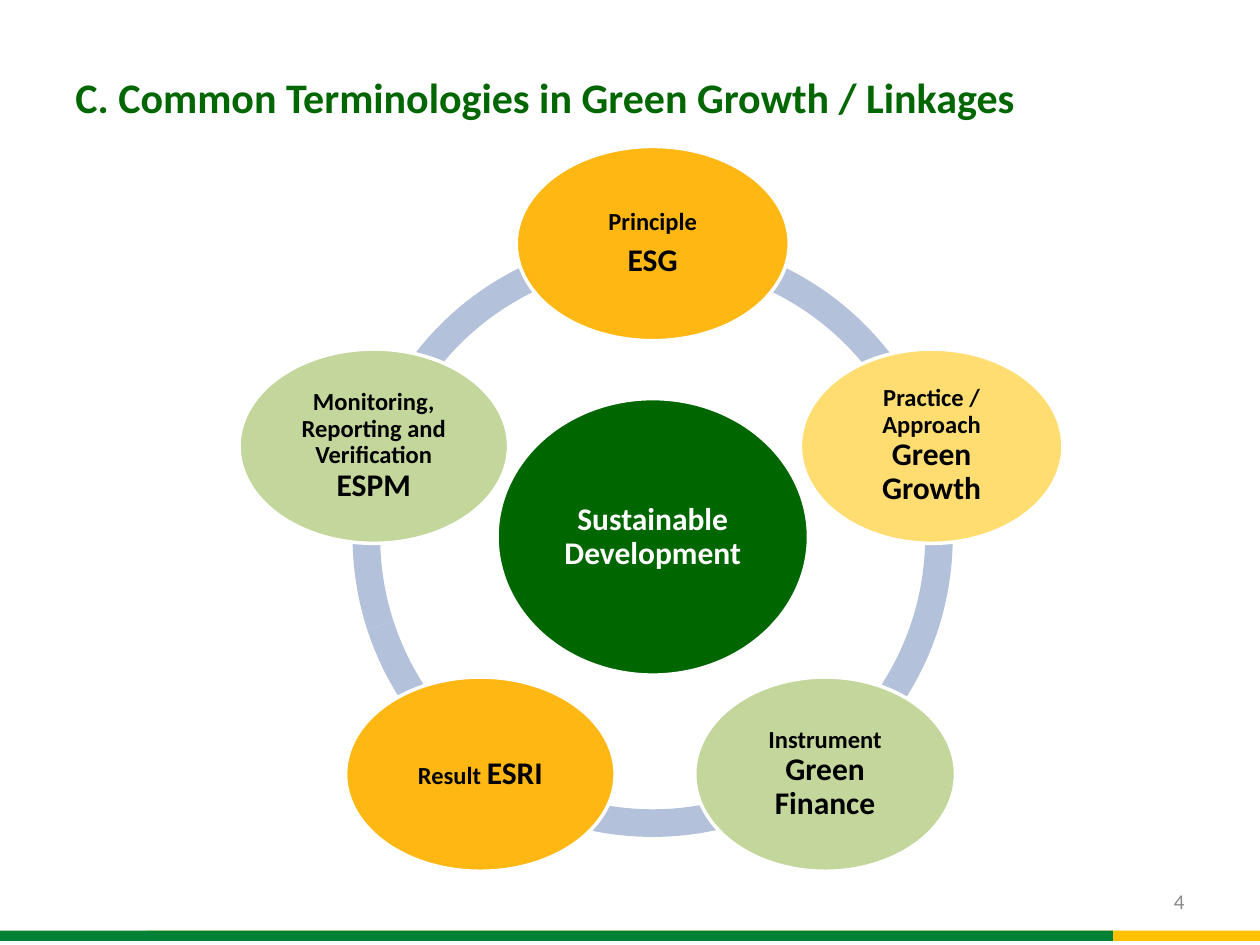
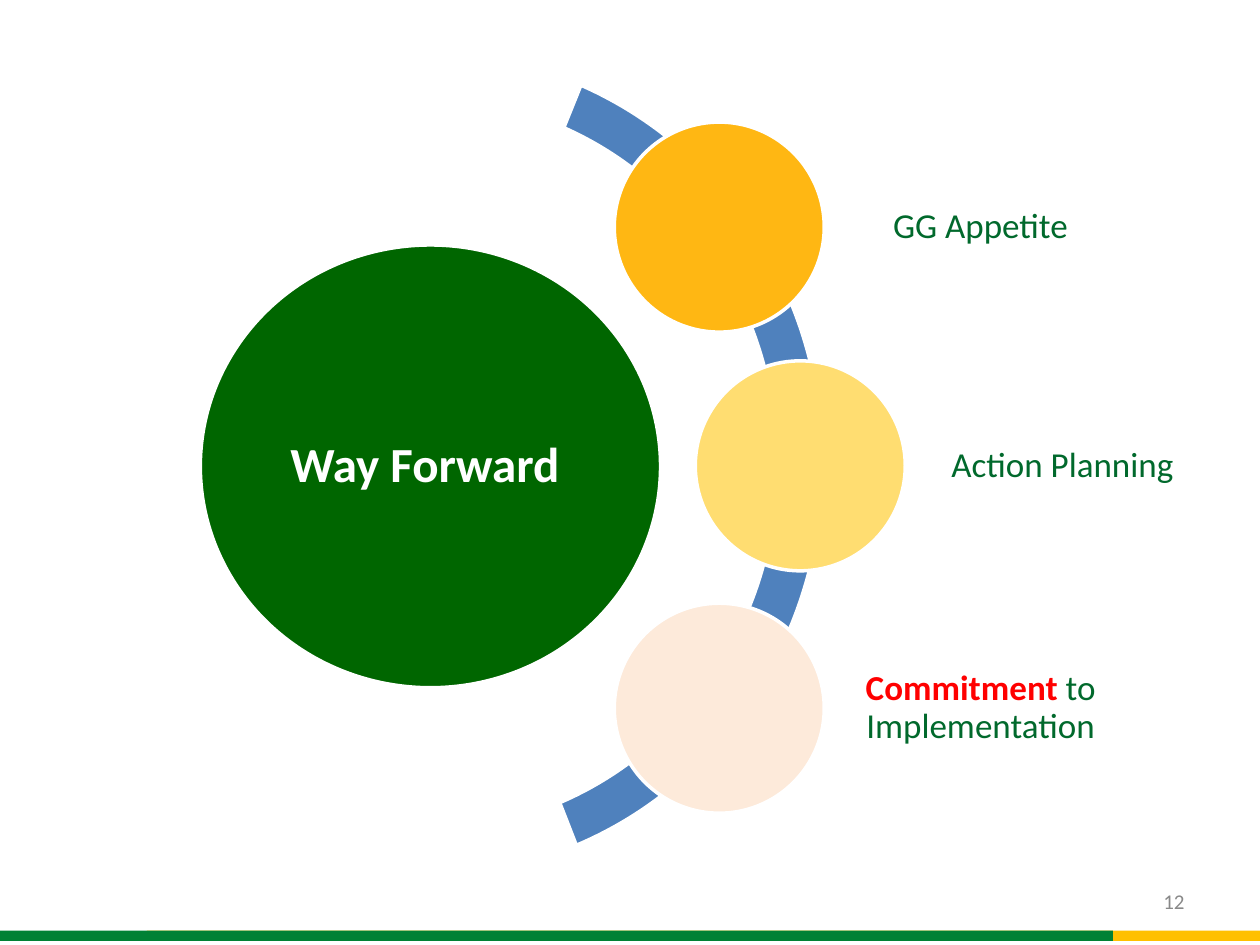
from dataclasses import dataclass
from itertools import pairwise
from math import cos, radians, sin

from pptx import Presentation
from pptx.dml import color
from pptx.enum import shapes, text
from pptx.util import Pt


@dataclass(frozen=True)
class Theme:
    font: str = "Calibri"
    white: str = "FFFFFF"
    black: str = "000000"
    dark_green: str = "006600"
    band_green: str = "018135"
    band_gold: str = "FFC000"
    label_green: str = "01692C"
    red: str = "FF0000"
    grey: str = "898989"
    orange: str = "FFB713"
    yellow: str = "FFDD71"
    light_green: str = "C3D69B"
    peach: str = "FDEADA"
    ring_blue: str = "B3C1DB"
    arc_blue: str = "4F81BD"
    hero_size: int = 28
    title_size: int = 24
    label_size: int = 20
    term_size: int = 18
    caption_size: int = 14
    number_size: int = 12
    outline: float = 2


THEME = Theme()
ALIGN = text.PP_ALIGN
ANCHOR = text.MSO_ANCHOR


def rgb(value):
    return color.RGBColor.from_string(value)


def style_font(font, size, ink, bold=False):
    font.name = THEME.font
    font.size = Pt(size)
    font.color.rgb = rgb(ink)
    font.bold = bold


def add_filled(slide, kind, left, top, width, height, fill, outlined=False):
    shape = slide.shapes.add_shape(kind, Pt(left), Pt(top), Pt(width), Pt(height))
    shape.shadow.inherit = False
    shape.fill.solid()
    shape.fill.fore_color.rgb = rgb(fill)
    if outlined:
        shape.line.color.rgb = rgb(THEME.white)
        shape.line.width = Pt(THEME.outline)
    else:
        shape.line.fill.background()
    return shape


def add_ellipse(slide, center_x, center_y, width, height, fill):
    return add_filled(slide, shapes.MSO_SHAPE.OVAL, center_x - width / 2,
                      center_y - height / 2, width, height, fill, outlined=True)


def add_arc(slide, center_x, center_y, width, height, start, end, thickness, fill, outlined=False):
    arc = add_filled(slide, shapes.MSO_SHAPE.BLOCK_ARC, center_x - width / 2,
                     center_y - height / 2, width, height, fill, outlined)
    arc.adjustments[0] = start * 0.6
    arc.adjustments[1] = end * 0.6
    arc.adjustments[2] = thickness


def write_centered(shape, paragraphs, inset, space_after):
    frame = shape.text_frame
    frame.word_wrap = True
    frame.vertical_anchor = ANCHOR.MIDDLE
    frame.margin_left = frame.margin_right = Pt(inset)
    frame.margin_top = frame.margin_bottom = Pt(inset)
    for index, runs in enumerate(paragraphs):
        paragraph = frame.add_paragraph() if index else frame.paragraphs[0]
        paragraph.alignment = ALIGN.CENTER
        paragraph.line_spacing = 0.9
        paragraph.space_after = Pt(space_after)
        for words, *style in runs:
            run = paragraph.add_run()
            run.text = words
            if len(runs) > 1:
                style_font(run.font, *style)
            else:
                style_font(paragraph.font, *style)


def add_line_of_text(slide, box, words, size, ink, alignment, anchor, bold=False):
    text_box = slide.shapes.add_textbox(*map(Pt, box))
    frame = text_box.text_frame
    frame.word_wrap = True
    frame.vertical_anchor = anchor
    paragraph = frame.paragraphs[0]
    paragraph.text = words
    paragraph.alignment = alignment
    style_font(paragraph.font, size, ink, bold)


def add_base_slide(presentation, number):
    slide = presentation.slides.add_slide(presentation.slide_layouts[6])
    for left, fill in ((84, THEME.band_gold), (0, THEME.band_green)):
        add_filled(slide, shapes.MSO_SHAPE.RECTANGLE, left, 531.8, 636, 5.8, fill)
    add_line_of_text(slide, (516, 500.5, 168, 28.8), str(number), THEME.number_size,
                     THEME.grey, ALIGN.RIGHT, ANCHOR.MIDDLE)
    return slide


def build_linkages(presentation):
    slide = add_base_slide(presentation, 4)
    add_line_of_text(slide, (36, 37.5, 666, 36), "C. Common Terminologies in Green Growth / Linkages",
                     THEME.title_size, THEME.dark_green, ALIGN.LEFT, ANCHOR.TOP, bold=True)

    center_x, center_y, radius, ring = 373, 306.8, 167.6, 343
    boundaries = [32.4 + 43.2 * step for step in range(5)]
    for start, end in pairwise(boundaries + boundaries[:1]):
        add_arc(slide, center_x, center_y, ring, ring, start, end, 0.046, THEME.ring_blue)

    core = add_ellipse(slide, center_x, center_y, 178, 158, THEME.dark_green)
    write_centered(core, [[("Sustainable Development", THEME.term_size, THEME.white, True)]], 2, 6)

    def caption(words):
        return words, THEME.caption_size, THEME.black, True

    def term(words):
        return words, THEME.term_size, THEME.black, True

    nodes = (
        (156, THEME.orange, [[caption("Principle")], [term("ESG")]]),
        (150, THEME.yellow, [[caption("Practice / Approach "), term("Green Growth")]]),
        (149, THEME.light_green, [[caption("Instrument "), term("Green Finance")]]),
        (154, THEME.orange, [[caption("Result "), term("ESRI")]]),
        (154, THEME.light_green,
         [[caption("Monitoring, Reporting and Verification "), term("ESPM")]]),
    )
    for index, (width, fill, paragraphs) in enumerate(nodes):
        angle = radians(360 / len(nodes) * index - 90)
        node = add_ellipse(slide, center_x + radius * cos(angle), center_y + radius * sin(angle),
                           width, 111, fill)
        write_centered(node, paragraphs, 1.5, 5)


def build_way_forward(presentation):
    slide = add_base_slide(presentation, 12)
    hub = add_ellipse(slide, 246, 266.5, 263, 253, THEME.dark_green)
    write_centered(hub, [[("Way Forward ", THEME.hero_size, THEME.white, True)]], 3, 10)
    add_arc(slide, 244.5, 265.3, 451.4, 470, 292, 68.7, 0.058, THEME.arc_blue, outlined=True)

    def label(words):
        return words, THEME.label_size, THEME.label_green

    commitment = ("Commitment", THEME.label_size, THEME.red, True)
    steps = (
        (411, 129.8, THEME.orange, (467.3, 186), [label("GG Appetite")]),
        (457.3, 266.2, THEME.yellow, (512.6, 189), [label("Action Planning")]),
        (411, 404.7, THEME.peach, (459.4, 202), [commitment, label(" to Implementation")]),
    )
    label_height = 116
    for center_x, center_y, fill, (left, width), runs in steps:
        add_ellipse(slide, center_x, center_y, 120, 120, fill)
        label_box = slide.shapes.add_textbox(Pt(left), Pt(center_y - label_height / 2),
                                             Pt(width), Pt(label_height))
        write_centered(label_box, [runs], 2, 2)


def main():
    presentation = Presentation()
    presentation.slide_width = Pt(720)
    presentation.slide_height = Pt(540)
    build_linkages(presentation)
    build_way_forward(presentation)
    presentation.save("out.pptx")


if __name__ == "__main__":
    main()
